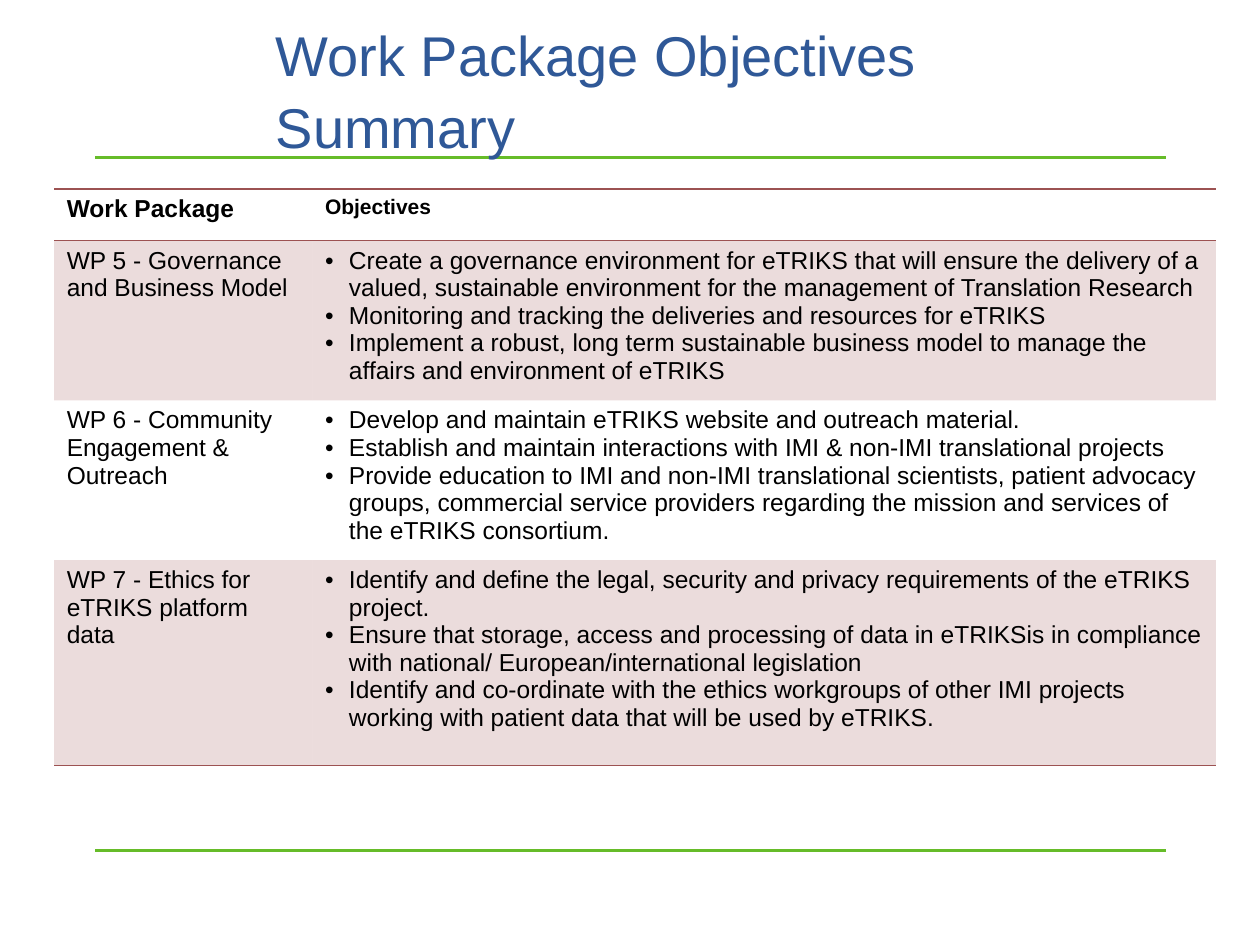
from lxml import etree
from pptx import Presentation
from pptx.dml.color import RGBColor
from pptx.enum.shapes import MSO_CONNECTOR
from pptx.enum.text import MSO_ANCHOR
from pptx.oxml.ns import qn
from pptx.util import Inches, Pt

STRAIGHT = MSO_CONNECTOR.STRAIGHT
MIDDLE = MSO_ANCHOR.MIDDLE

FONT = "Arial"
COLORS = {"title": "2F5897", "rule": "66BC29", "accent": "9C5252", "text": "000000"}
NO_TABLE_STYLE = "{2D5ABB26-0587-4C30-8999-92F81FD0307C}"
BULLET_INDENT = Inches(0.19)

TITLE = "Work Package Objectives Summary"
HEADERS = [("Work Package", 14), ("Objectives", 12)]
COLUMN_WIDTHS = [2.05, 7.17]
ROW_HEIGHTS = [0.41, 1.19, 1.2, 1.63]
PACKAGES = [
    ("WP 5 - Governance and Business Model", [
        "Create a governance environment for eTRIKS that will ensure the delivery of a "
        "valued, sustainable environment for the management of Translation Research",
        "Monitoring and tracking the deliveries and resources for eTRIKS",
        "Implement a robust, long term sustainable business model to manage the "
        "affairs and environment of eTRIKS",
    ]),
    ("WP 6 - Community Engagement & Outreach", [
        "Develop and maintain eTRIKS website and outreach material.",
        "Establish and maintain interactions with IMI & non-IMI translational projects",
        "Provide education to IMI and non-IMI translational scientists, patient advocacy "
        "groups, commercial service providers regarding the mission and services of "
        "the eTRIKS consortium.",
    ]),
    ("WP 7 - Ethics for eTRIKS platform data", [
        "Identify and define the legal, security and privacy requirements of the eTRIKS project.",
        "Ensure that storage, access and processing of data in eTRIKSis in "
        "compliance with national/ European/international legislation",
        "Identify and co-ordinate with the ethics workgroups of other IMI projects "
        "working with patient data that will be used by eTRIKS.",
    ]),
]


def color(name):
    return RGBColor.from_string(COLORS[name])


def style_text(paragraph, size, name="text", bold=False):
    for span in paragraph.runs:
        span.font.name = FONT
        span.font.size = Pt(size)
        span.font.bold = bold
        span.font.color.rgb = color(name)


def add_rule(page, top):
    rule = page.shapes.add_connector(
        STRAIGHT, Inches(9.25), Inches(top), Inches(0.75), Inches(top))
    rule.line.color.rgb = color("rule")
    rule.line.width = Pt(2.25)
    etree.SubElement(rule._element.spPr, qn("a:effectLst"))


def add_title(page):
    box = page.shapes.add_textbox(Inches(2.09), Inches(0.36), Inches(6.67), Inches(0.67))
    frame = box.text_frame
    frame.word_wrap = True
    frame.vertical_anchor = MIDDLE
    frame.text = TITLE
    frame.paragraphs[0].line_spacing = 1.08
    style_text(frame.paragraphs[0], 32, "title")


def add_bullet(paragraph):
    properties = paragraph._p.get_or_add_pPr()
    properties.set("marL", str(BULLET_INDENT))
    properties.set("indent", str(-BULLET_INDENT))
    etree.SubElement(properties, qn("a:buFont"), typeface=FONT)
    etree.SubElement(properties, qn("a:buChar"), char="•")


def set_borders(cell, sides):
    properties = cell._tc.get_or_add_tcPr()
    for side in sides:
        line = etree.SubElement(properties, qn(f"a:ln{side}"), w=str(Pt(1)))
        fill = etree.SubElement(line, qn("a:solidFill"))
        etree.SubElement(fill, qn("a:srgbClr"), val=COLORS["accent"])


def set_fill(cell, shaded):
    if not shaded:
        cell.fill.background()
        return
    cell.fill.solid()
    cell.fill.fore_color.rgb = color("accent")
    shade = cell._tc.tcPr.find(".//" + qn("a:solidFill") + "/" + qn("a:srgbClr"))
    # The fill is the last solidFill child, after any border lines
    shade = cell._tc.tcPr.find(qn("a:solidFill")).find(qn("a:srgbClr"))
    etree.SubElement(shade, qn("a:alpha"), val="20000")


def fill_cell(cell, lines, size=14, bold=False, bulleted=False):
    cell.text_frame.text = "\n".join(lines)
    for paragraph in cell.text_frame.paragraphs:
        if bulleted:
            add_bullet(paragraph)
        style_text(paragraph, size, bold=bold)


def add_objectives_table(page):
    frame = page.shapes.add_table(
        len(ROW_HEIGHTS), len(COLUMN_WIDTHS), Inches(0.43), Inches(1.5),
        Inches(sum(COLUMN_WIDTHS)), Inches(sum(ROW_HEIGHTS)))
    table = frame.table
    table._tbl.tblPr.find(qn("a:tableStyleId")).text = NO_TABLE_STYLE
    table.horz_banding = False
    for column, width in zip(table.columns, COLUMN_WIDTHS):
        column.width = Inches(width)
    for row, height in zip(table.rows, ROW_HEIGHTS):
        row.height = Inches(height)

    # Header and package text
    for index, (header, size) in enumerate(HEADERS):
        fill_cell(table.cell(0, index), [header], size, bold=True)
    for index, (package, objectives) in enumerate(PACKAGES, start=1):
        fill_cell(table.cell(index, 0), [package])
        fill_cell(table.cell(index, 1), objectives, bulleted=True)

    # Rules around the header and below the last row, shading on odd rows
    borders = {0: "TB", len(PACKAGES): "B"}
    for index, row in enumerate(table.rows):
        for cell in row.cells:
            set_borders(cell, borders.get(index, ""))
            set_fill(cell, index % 2 == 1)


def main():
    deck = Presentation()
    deck.slide_width, deck.slide_height = Inches(10), Inches(7.5)
    page = deck.slides.add_slide(deck.slide_layouts[6])
    for top in (6.75, 1.25):
        add_rule(page, top)
    add_title(page)
    add_objectives_table(page)
    deck.save("out.pptx")


if __name__ == "__main__":
    main()
